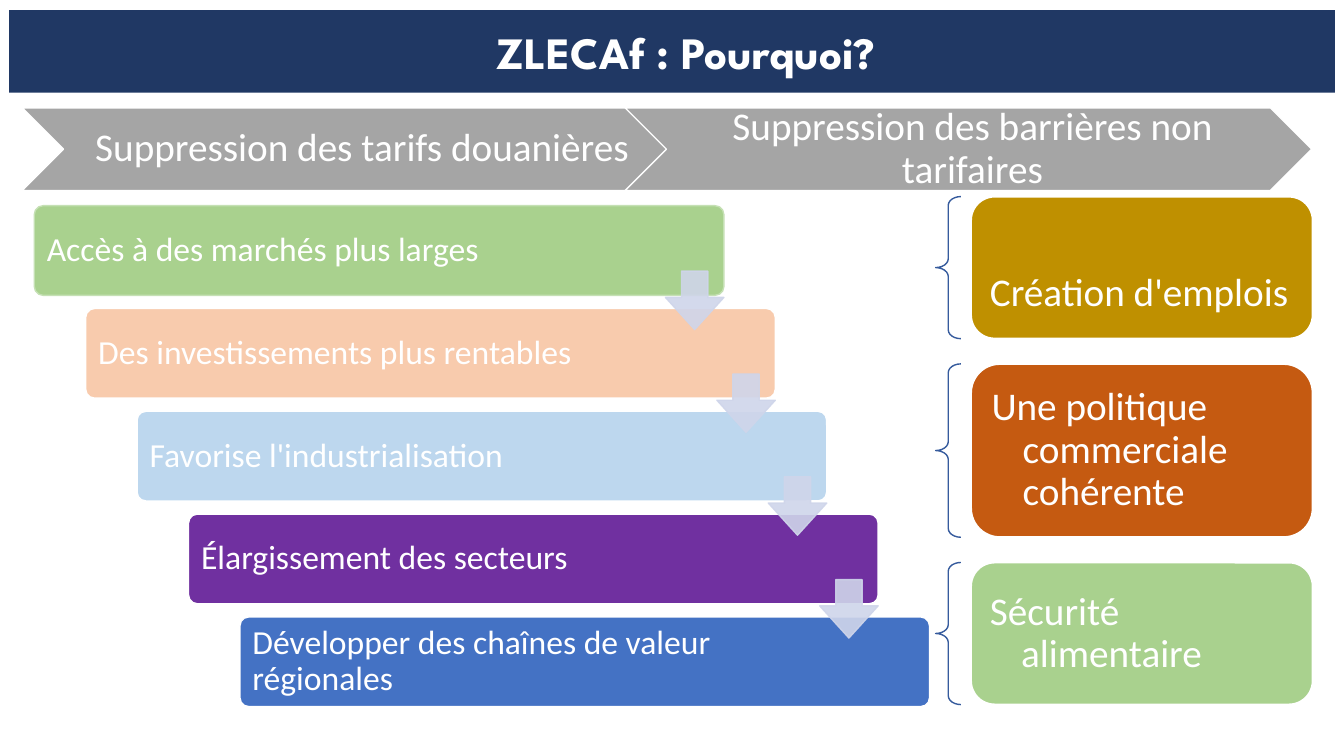
from lxml import etree
from pptx import Presentation, util as u
from pptx.dml.color import RGBColor
from pptx.enum import shapes, text
from pptx.oxml.ns import qn

KIND = shapes.MSO_SHAPE
ALIGN = text.PP_ALIGN
WHITE = "FFFFFF"
STEP_X, STEP_Y = 0.51, 1.02
CARD_LEFT, CARD_WIDTH = 9.63, 3.39


def paint(fill, color, alpha=100):
    fill.solid()
    fill.fore_color.rgb = RGBColor.from_string(color)
    if alpha < 100:
        tint = fill._xPr.find(qn("a:solidFill"))[0]
        etree.SubElement(tint, qn("a:alpha"), val=str(alpha * 1000))


def draw(kind, place, fill=None, line=WHITE, width=1, adjust=(), alpha=100,
         words="", size=24, insets=(0.1, 0.1, 0.1, 0.1), align=ALIGN.LEFT):
    box = page.shapes.add_shape(kind, *map(u.Inches, place))
    box.shadow.inherit = False
    for index, value in enumerate(adjust):
        box.adjustments[index] = value
    if fill:
        paint(box.fill, fill, alpha)
    else:
        box.fill.background()
    paint(box.line.fill, line, alpha)
    box.line.width = u.Pt(width)
    if words:
        frame = box.text_frame
        frame.word_wrap = True
        frame.vertical_anchor = text.MSO_ANCHOR.MIDDLE
        for side, inset in zip(("left", "top", "right", "bottom"), insets):
            setattr(frame, f"margin_{side}", u.Inches(inset))
        para = frame.paragraphs[0]
        para.text = words
        for name, value in {"alignment": align, "line_spacing": 0.9}.items():
            setattr(para, name, value)
        for name, value in {"name": "Calibri", "size": u.Pt(size)}.items():
            setattr(para.font, name, value)
        paint(para.font.fill, WHITE)
    return box


deck = Presentation()
deck.slide_width, deck.slide_height = u.Inches(13.33), u.Inches(7.5)
page = deck.slides.add_slide(deck.slide_layouts[5])

title = page.shapes.title
banner = {"left": 0.09, "top": 0.1, "width": 13.15, "height": 0.82}
for name, value in banner.items():
    setattr(title, name, u.Inches(value))
outline = etree.SubElement(title._element.spPr, qn("a:prstGeom"), prst="roundRect")
etree.SubElement(outline, qn("a:avLst"))
paint(title.fill, "203864")
title_format = {"margin_left": u.Inches(0.38), "margin_right": u.Inches(0.1),
                "vertical_anchor": text.MSO_ANCHOR.MIDDLE,
                "auto_size": text.MSO_AUTO_SIZE.NONE, "word_wrap": True}
for name, value in title_format.items():
    setattr(title.text_frame, name, value)
para = title.text_frame.paragraphs[0]
para.text = "ZLECAf : Pourquoi?"
para.alignment = ALIGN.CENTER
for name, value in {"name": "League Spartan", "size": u.Pt(32), "bold": True}.items():
    setattr(para.font, name, value)
paint(para.font.fill, WHITE)

steps = [
    ("Accès à des marchés plus larges", "A9D18E", "C5E0B4"),
    ("Des investissements plus rentables", "F8CBAD", WHITE),
    ("Favorise l'industrialisation", "BDD7EE", WHITE),
    ("Élargissement des secteurs", "7030A0", WHITE),
    ("Développer des chaînes de valeur régionales", "4472C4", WHITE),
]
for index, (words, color, border) in enumerate(steps):
    place = (0.34 + index * STEP_X, 2.04 + index * STEP_Y, 6.84, 0.89)
    draw(KIND.ROUNDED_RECTANGLE, place, color, border, adjust=[0.1],
         words=words, insets=(0.1, 0.1, 1.18, 0.1))
for index in range(len(steps) - 1):
    place = (6.6 + index * STEP_X, 2.69 + index * STEP_Y, 0.58, 0.58)
    draw(KIND.DOWN_ARROW, place, "CFD5EA", "CFD5EA", adjust=[0.45, 0.55], alpha=90)

cards = [
    ("Création d'emplois", "BF9000", 1.95, 1.41, 0.64),
    ("Une politique commerciale cohérente", "C55A11", 3.61, 1.72, 0.12),
    ("Sécurité alimentaire", "A9D18E", 5.58, 1.41, 0.12),
]
for words, color, top, height, inset in cards:
    draw(KIND.LEFT_BRACE, (CARD_LEFT - 0.35, top, 0.25, height),
         line="365B9D", adjust=[0.35, 0.5])
    card = draw(KIND.ROUNDED_RECTANGLE, (CARD_LEFT, top, CARD_WIDTH, height), color,
                width=1.5, words=words, size=28, insets=(0.12, inset, 0.12, 0.12))
    hanging = card.text_frame.paragraphs[0]._p.get_or_add_pPr()
    hanging.set("marL", str(u.Inches(0.31)))
    hanging.set("indent", str(-u.Inches(0.31)))

chevrons = [
    ("Suppression des tarifs douanières", 0.22, 6.66),
    ("Suppression des barrières non tarifaires", 6.2, 6.81),
]
for words, left, width in chevrons:
    draw(KIND.CHEVRON, (left, 1.07, width, 0.82), "A5A5A5", words=words, size=28,
         insets=(0.12, 0.04, 0.04, 0.04), align=ALIGN.CENTER)

deck.save("out.pptx")
